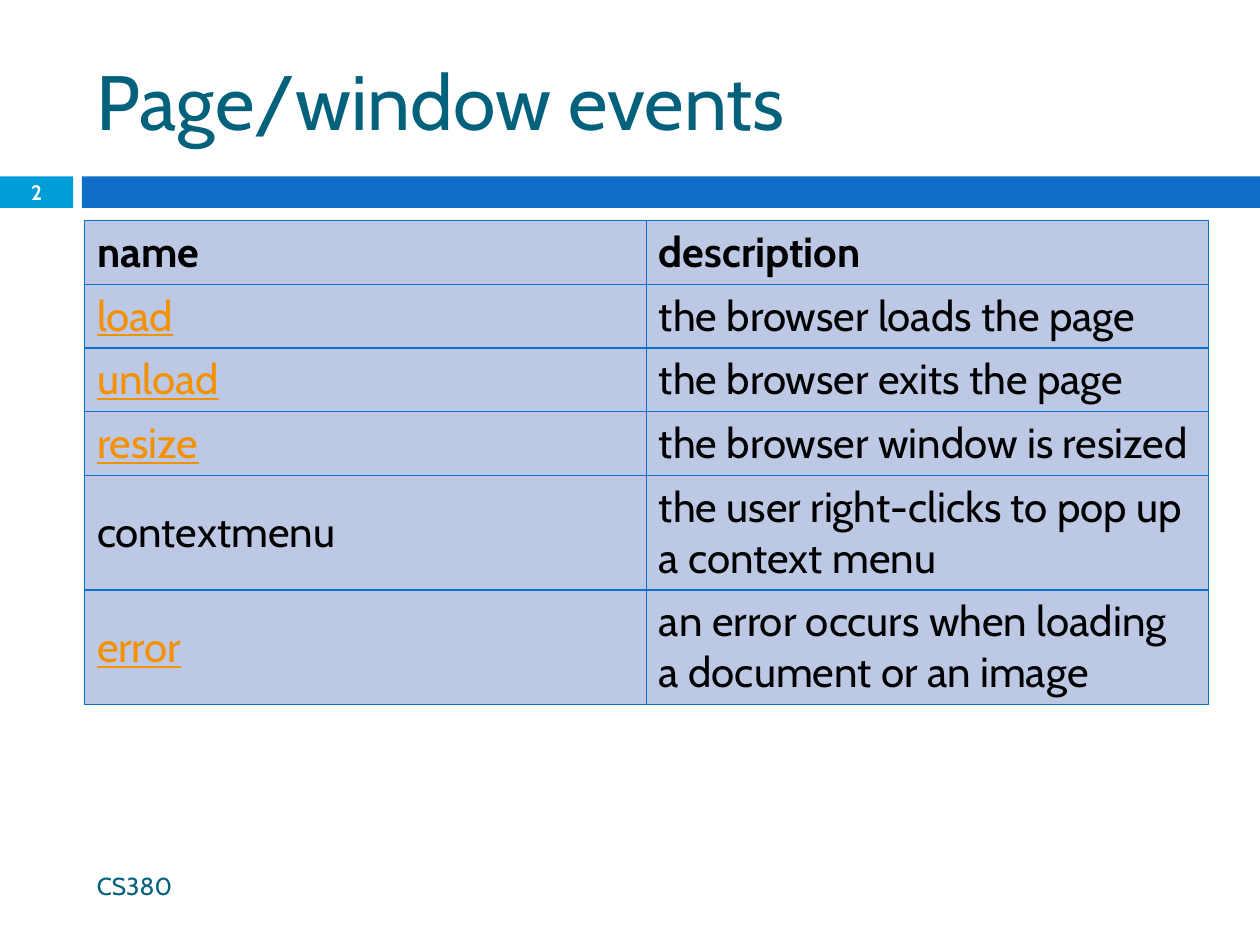
from dataclasses import dataclass
from typing import NamedTuple

from lxml import etree
from pptx import Presentation
from pptx import util as u
from pptx.dml.color import RGBColor
from pptx.enum import shapes, text
from pptx.oxml import ns

COLS, ROWS = 100, 75  # grid units across and down the slide


@dataclass(frozen=True)
class Theme:
    font: str = "Cabin"
    heading: str = "04617B"
    accent: str = "009DD9"
    bar: str = "0F6FC6"
    cell: str = "BDC8E4"
    body: str = "000000"
    link: str = "F49100"
    white: str = "FFFFFF"
    title_pt: float = 44
    table_pt: float = 24
    footer_pt: float = 14
    number_pt: float = 11.9
    border_pt: float = 0.79


class Box(NamedTuple):
    col: float
    row: float
    cols: float
    rows: float


class Label(NamedTuple):
    box: Box
    words: str
    size: float
    color: str
    bold: bool = False
    centred: bool = False


class Event(NamedTuple):
    name: str
    description: str
    linked: bool = True
    lines: int = 1


T = Theme()
ROW_HEIGHT = {1: 5.05, 2: 9.1}  # by number of text lines
TABLE = Box(6.7, 17.5, 89.2, 38.4)
BARS = [(Box(0, 14, 5.8, 2.5), T.accent), (Box(6.5, 14, 93.5, 2.5), T.bar)]
LABELS = [
    Label(Box(6.7, 2.5, 89.2, 10.8), "Page/window events", T.title_pt, T.heading),
    Label(Box(6.7, 68.3, 59.3, 4), "CS380", T.footer_pt, T.heading),
    Label(Box(0, 13.9, 5.8, 2.7), "2", T.number_pt, T.white, True, True),
]
EVENTS = [
    Event("name", "description", linked=False),
    Event("load", "the browser loads the page"),
    Event("unload", "the browser exits the page"),
    Event("resize", "the browser window is resized"),
    Event("contextmenu", "the user right-clicks to pop up a context menu",
          linked=False, lines=2),
    Event("error", "an error occurs when loading a document or an image", lines=2),
]

prs = Presentation()
prs.slide_width, prs.slide_height = u.Inches(10), u.Inches(7.5)


def across(cols: float) -> int:
    return round(prs.slide_width * cols / COLS)


def down(rows: float) -> int:
    return round(prs.slide_height * rows / ROWS)


def place(box: Box) -> tuple[int, int, int, int]:
    return across(box.col), down(box.row), across(box.cols), down(box.rows)


def style(tf, size: float, color: str, bold: bool = False, underline: bool = False) -> None:
    for p in tf.paragraphs:
        for r in p.runs:
            r.font.name = T.font
            r.font.size = u.Pt(size)
            r.font.bold = bold
            r.font.underline = underline
            r.font.color.rgb = RGBColor.from_string(color)


def add_bar(s, box: Box, color: str) -> None:
    sp = s.shapes.add_shape(shapes.MSO_SHAPE.RECTANGLE, *place(box))
    sp.shadow.inherit = False
    sp.fill.solid()
    sp.fill.fore_color.rgb = RGBColor.from_string(color)
    sp.line.fill.background()


def add_label(s, label: Label) -> None:
    tf = s.shapes.add_textbox(*place(label.box)).text_frame
    tf.word_wrap = True
    tf.vertical_anchor = text.MSO_ANCHOR.MIDDLE
    tf.text = label.words
    if label.centred:
        tf.paragraphs[0].alignment = text.PP_ALIGN.CENTER
    style(tf, label.size, label.color, label.bold)


def add_borders(cell) -> None:
    """Draw a thin line on all four sides of a table cell."""
    props = cell._tc.get_or_add_tcPr()
    for side in ("a:lnL", "a:lnR", "a:lnT", "a:lnB"):
        line = etree.SubElement(props, ns.qn(side), w=str(int(u.Pt(T.border_pt))))
        fill = etree.SubElement(line, ns.qn("a:solidFill"))
        etree.SubElement(fill, ns.qn("a:srgbClr"), val=T.bar)


def fill_cell(cell, words: str, bold: bool, linked: bool) -> None:
    add_borders(cell)
    cell.fill.solid()
    cell.fill.fore_color.rgb = RGBColor.from_string(T.cell)
    cell.vertical_anchor = text.MSO_ANCHOR.MIDDLE
    cell.text_frame.text = words
    style(cell.text_frame, T.table_pt, T.link if linked else T.body, bold, linked)


def add_event_table(s, events: list[Event]) -> None:
    table = s.shapes.add_table(len(events), 2, *place(TABLE)).table
    table.first_row = table.horz_banding = False
    for column in table.columns:
        column.width = across(TABLE.cols / 2)
    for i, event in enumerate(events):
        table.rows[i].height = down(ROW_HEIGHT[event.lines])
        fill_cell(table.cell(i, 0), event.name, i == 0, event.linked)
        fill_cell(table.cell(i, 1), event.description, i == 0, False)


def main() -> None:
    s = prs.slides.add_slide(prs.slide_layouts[6])
    for box, color in BARS:
        add_bar(s, box, color)
    add_event_table(s, EVENTS)
    for label in LABELS:
        add_label(s, label)
    prs.save("out.pptx")


if __name__ == "__main__":
    main()
